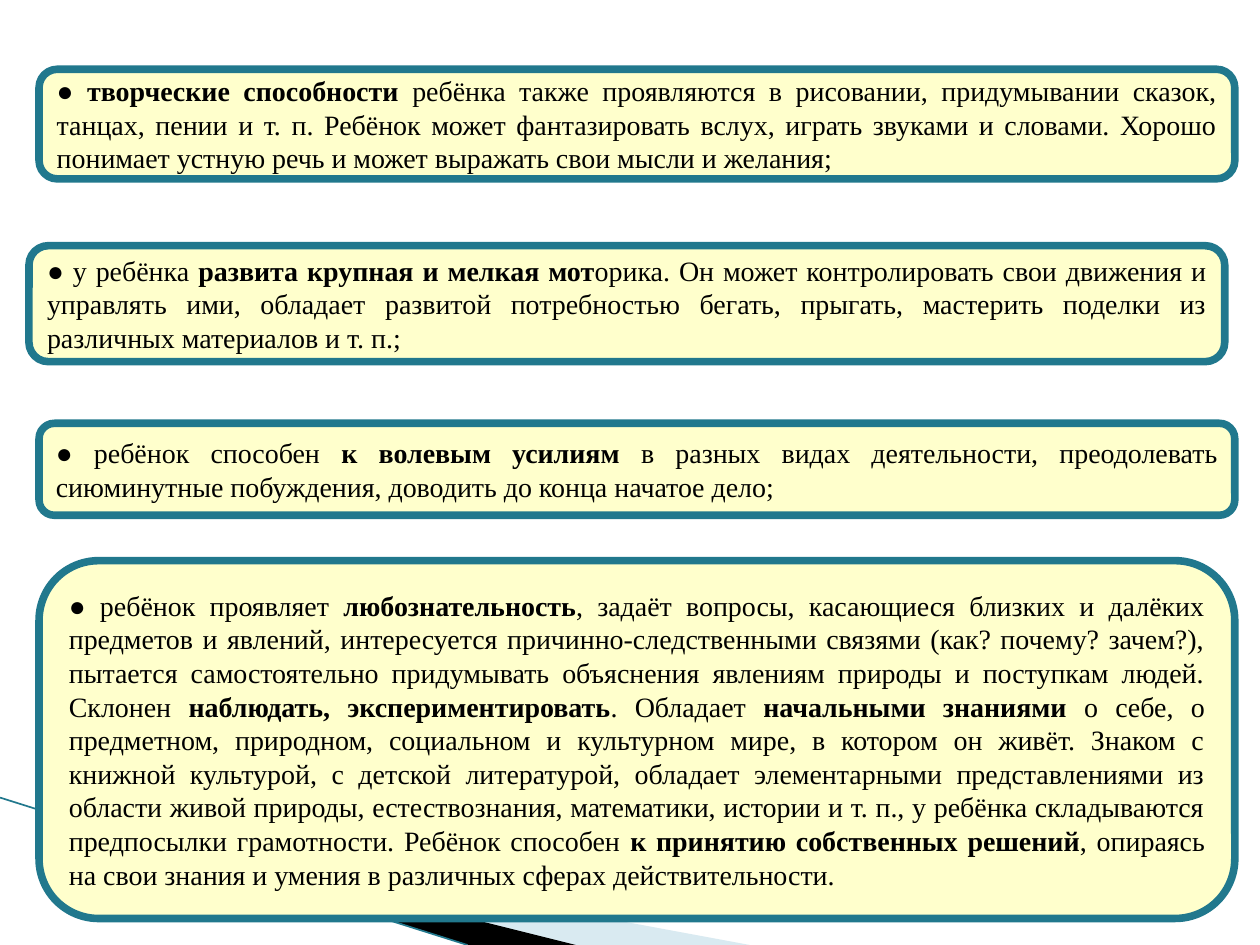
from dataclasses import dataclass
from lxml import etree
from pptx import Presentation
from pptx.dml.color import RGBColor
from pptx.enum.shapes import MSO_CONNECTOR, MSO_SHAPE
from pptx.enum.text import MSO_ANCHOR, PP_ALIGN
from pptx.oxml.ns import qn
from pptx.util import Inches, Pt

ROUND = MSO_SHAPE.ROUNDED_RECTANGLE
STRAIGHT = MSO_CONNECTOR.STRAIGHT
MIDDLE = MSO_ANCHOR.MIDDLE
JUSTIFY = PP_ALIGN.JUSTIFY


@dataclass(frozen=True)
class Theme:
    font: str = "Times New Roman"
    size: Pt = Pt(16)
    ink: RGBColor = RGBColor(0, 0, 0)
    cream: RGBColor = RGBColor(0xFF, 0xFF, 0xCC)
    teal: RGBColor = RGBColor(0x21, 0x78, 0x8D)
    mist: RGBColor = RGBColor(0xA0, 0xCB, 0xDC)
    border: Pt = Pt(4.33)
    hair: Pt = Pt(0.95)


THEME = Theme()

CARDS = [
    (0.31, 4.45, 2.84,
     "● ребёнок проявляет *любознательность*, задаёт вопросы, касающиеся "
     "близких и далёких предметов и явлений, интересуется "
     "причинно-следственными связями (как? почему? зачем?), пытается "
     "самостоятельно придумывать объяснения явлениям природы и поступкам "
     "людей. Склонен *наблюдать, экспериментировать*. Обладает *начальными "
     "знаниями* о себе, о предметном, природном, социальном и культурном "
     "мире, в котором он живёт. Знаком с книжной культурой, с детской "
     "литературой, обладает элементарными представлениями из области живой "
     "природы, естествознания, математики, истории и т. п., у ребёнка "
     "складываются предпосылки грамотности. Ребёнок способен *к принятию "
     "собственных решений*, опираясь на свои знания и умения в различных "
     "сферах действительности."),
    (0.31, 3.36, 0.73,
     "● ребёнок способен* к волевым усилиям* в разных видах деятельности, "
     "преодолевать сиюминутные побуждения, доводить до конца начатое дело;"),
    (0.23, 1.95, 0.92,
     "● у ребёнка *развита крупная и мелкая мот*орика. Он может "
     "контролировать свои движения и управлять ими, обладает развитой "
     "потребностью бегать, прыгать, мастерить поделки из различных "
     "материалов и т. п.;"),
    (0.31, 0.55, 0.87,
     "● *творческие способности *ребёнка также проявляются в рисовании, "
     "придумывании сказок, танцах, пении и т. п. Ребёнок может "
     "фантазировать вслух, играть звуками и словами. Хорошо понимает "
     "устную речь и может выражать свои мысли и желания;"),
]


def add_wedge(slide, points, color, alpha=None):
    start, *rest = [(Inches(x), Inches(y)) for x, y in points]
    pen = slide.shapes.build_freeform(*start)
    pen.add_line_segments(rest, close=True)
    wedge = pen.convert_to_shape()
    wedge.shadow.inherit = False
    wedge.fill.solid()
    wedge.fill.fore_color.rgb = color
    wedge.line.fill.background()
    if alpha is not None:
        tint = wedge.fill._xPr.find(".//" + qn("a:srgbClr"))
        etree.SubElement(tint, qn("a:alpha"), val=str(alpha * 1000))


def add_rule(slide, start, end):
    ends = [Inches(v) for v in (*start, *end)]
    rule = slide.shapes.add_connector(STRAIGHT, *ends)
    rule.line.color.rgb = THEME.teal
    rule.line.width = THEME.hair
    etree.SubElement(rule._element.spPr, qn("a:effectLst"))


def add_card(slide, left, top, height, text):
    card = slide.shapes.add_shape(
        ROUND, Inches(left), Inches(top), Inches(9.49), Inches(height))
    card.shadow.inherit = False
    card.fill.solid()
    card.fill.fore_color.rgb = THEME.cream
    card.line.color.rgb = THEME.teal
    card.line.width = THEME.border
    frame = card.text_frame
    frame.word_wrap = True
    frame.vertical_anchor = MIDDLE
    para = frame.paragraphs[0]
    para.alignment = JUSTIFY
    para.font.name = THEME.font
    para.font.size = THEME.size
    para.font.color.rgb = THEME.ink
    for i, part in enumerate(text.split("*")):
        run = para.add_run()
        run.text = part
        if i % 2:
            run.font.bold = True


def main():
    deck = Presentation()
    deck.slide_width = Inches(10)
    deck.slide_height = Inches(7.5)
    slide = deck.slides.add_slide(deck.slide_layouts[6])
    add_wedge(slide, [(0.55, 6.5), (5.95, 7.5), (4.56, 7.5)], THEME.mist, 40)
    add_wedge(slide, [(0.53, 6.49), (4.57, 7.5), (3.72, 7.5)], THEME.ink)
    add_rule(slide, (0, 6.33), (3.71, 7.5))
    for card in CARDS:
        add_card(slide, *card)
    deck.save("out.pptx")


if __name__ == "__main__":
    main()
